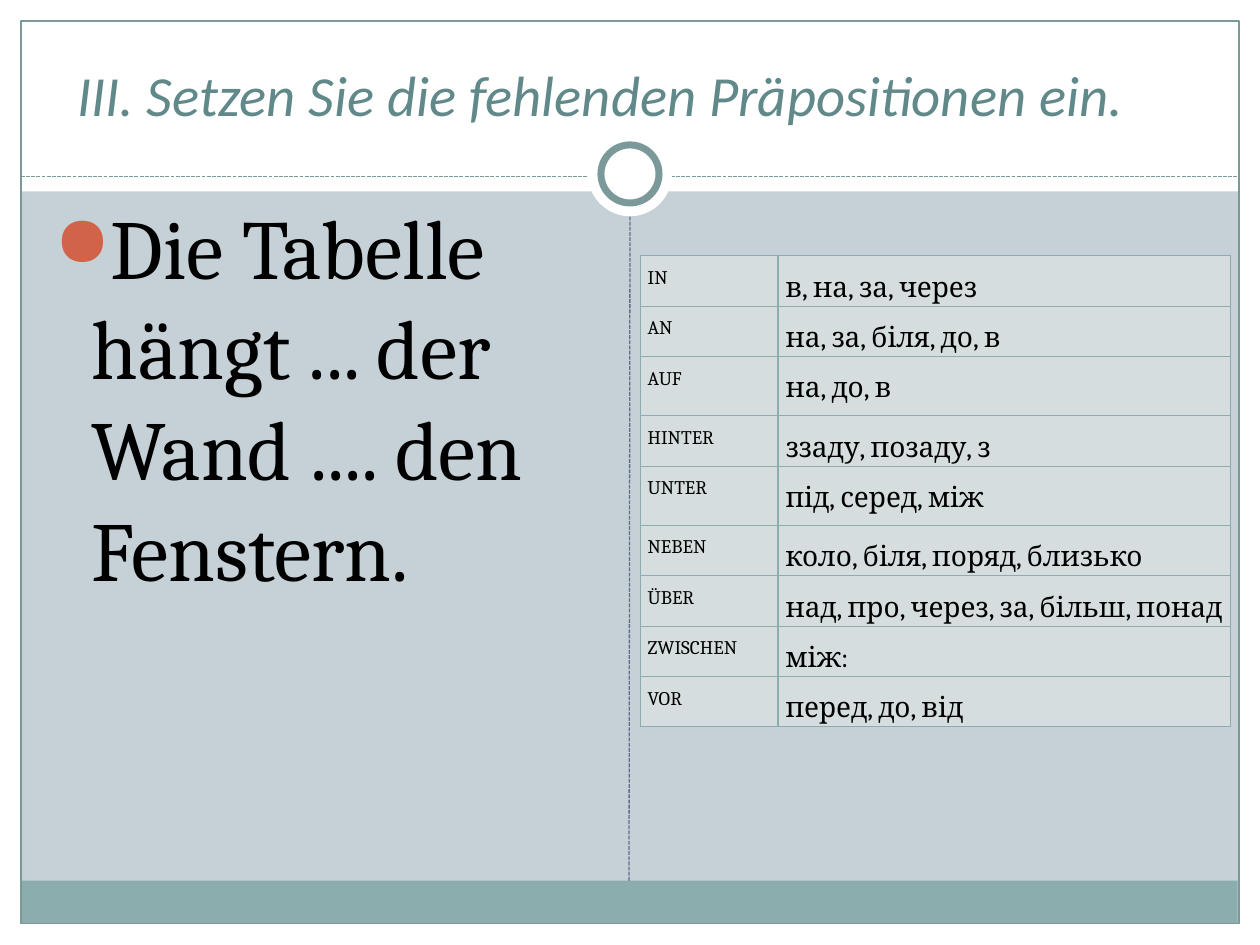
from dataclasses import dataclass

from lxml.etree import SubElement
from pptx import Presentation
from pptx.dml.color import RGBColor
from pptx.enum.dml import MSO_LINE
from pptx.enum.shapes import MSO_CONNECTOR, MSO_SHAPE
from pptx.enum.text import MSO_ANCHOR, PP_ALIGN
from pptx.oxml.ns import qn
from pptx.util import Pt

WHITE = RGBColor(0xFF, 0xFF, 0xFF)
BLACK = RGBColor(0x00, 0x00, 0x00)
MIST = RGBColor(0xC5, 0xD1, 0xD7)
PALE = RGBColor(0xD5, 0xDD, 0xDE)
SAGE = RGBColor(0x8C, 0xAD, 0xAE)
TEAL = RGBColor(0x7C, 0x99, 0x9A)
DEEP = RGBColor(0x61, 0x89, 0x8A)
SLATE = RGBColor(0x64, 0x6B, 0x86)
RUST = RGBColor(0xD1, 0x63, 0x49)


@dataclass
class Panel:
    """A preset shape with its place in points and its colours."""

    left: float
    top: float
    width: float
    height: float
    fill: RGBColor | None = WHITE
    edge: RGBColor | None = None
    weight: float = 0.75
    kind: MSO_SHAPE = MSO_SHAPE.RECTANGLE


@dataclass
class Entry:
    """A preposition with its meanings and row height."""

    word: str
    sense: str
    height: float = 28.1


MARGINS = [
    Panel(0, 527.8, 720, 12.2),
    Panel(0, 0, 720, 109.4),
    Panel(0, 0, 12, 540),
    Panel(708, 0, 12, 540),
]
FOOTER = Panel(11.7, 503.3, 695.5, 24.5, SAGE)
FRAME = Panel(12, 12, 696, 515.8, None, TEAL)
RINGS = [
    Panel(336, 75.6, 48, 48, kind=MSO_SHAPE.OVAL),
    Panel(343.4, 82.8, 33.2, 33.2, WHITE, TEAL, 4, MSO_SHAPE.OVAL),
]
ENTRIES = [
    Entry("IN", "в, на, за, через"),
    Entry("AN", "на, за, біля, до, в"),
    Entry("AUF", "на, до, в", 33.8),
    Entry("HINTER", "ззаду, позаду, з"),
    Entry("UNTER", "під, серед, між", 33.8),
    Entry("NEBEN", "коло, біля, поряд, близько"),
    Entry("ÜBER", "над, про, через, за, більш, понад"),
    Entry("ZWISCHEN", "між:", 26),
    Entry("VOR", "перед, до, від", 22.3),
]


def add_panel(slide, panel: Panel):
    """Draw a panel and return its shape."""
    shape = slide.shapes.add_shape(
        panel.kind, Pt(panel.left), Pt(panel.top), Pt(panel.width), Pt(panel.height)
    )
    shape.shadow.inherit = False
    if panel.fill is None:
        shape.fill.background()
    else:
        shape.fill.solid()
        shape.fill.fore_color.rgb = panel.fill
    if panel.edge is None:
        shape.line.fill.background()
    else:
        shape.line.color.rgb = panel.edge
        shape.line.width = Pt(panel.weight)
    return shape


def add_rule(slide, start: tuple, end: tuple, color: RGBColor):
    """Draw a thin dashed line and return it."""
    rule = slide.shapes.add_connector(
        MSO_CONNECTOR.STRAIGHT, *[Pt(value) for value in (*start, *end)]
    )
    rule.line.color.rgb = color
    rule.line.width = Pt(0.75)
    rule.line.dash_style = MSO_LINE.SQUARE_DOT
    SubElement(rule._element.spPr, qn("a:effectLst"))
    return rule


def style_text(part, size: float, font: str, color: RGBColor) -> None:
    """Format the first run of a paragraph."""
    face = part.runs[0].font
    face.size, face.name = Pt(size), font
    face.color.rgb = color


def add_text(slide, text: str, left: float, top: float, width: float, height: float):
    """Add a wrapped text box and return its frame."""
    frame = slide.shapes.add_textbox(Pt(left), Pt(top), Pt(width), Pt(height)).text_frame
    frame.word_wrap = True
    frame.text = text
    return frame


def add_bullet(part) -> None:
    """Give a paragraph a round coloured bullet and hanging indent."""
    props = part._p.get_or_add_pPr()
    props.set("marL", str(Pt(21.6)))
    props.set("indent", str(Pt(-21.6)))
    tint = SubElement(props, qn("a:buClr"))
    SubElement(tint, qn("a:srgbClr"), val=str(RUST))
    SubElement(props, qn("a:buSzPct"), val="85000")
    SubElement(props, qn("a:buChar"), char="●")


def fill_cell(cell, text: str, size: float) -> None:
    """Write a table cell with its fill and borders."""
    cell.margin_left = cell.margin_right = Pt(4.3)
    cell.margin_top = cell.margin_bottom = 0
    cell.text_frame.text = text
    part = cell.text_frame.paragraphs[0]
    part.alignment = PP_ALIGN.JUSTIFY
    part.line_spacing = 1.5
    style_text(part, size, "Cambria", BLACK)
    props = cell._tc.get_or_add_tcPr()
    for side in ("lnL", "lnR", "lnT", "lnB"):
        line = SubElement(props, qn(f"a:{side}"), w=str(Pt(0.75)))
        paint = SubElement(line, qn("a:solidFill"))
        SubElement(paint, qn("a:srgbClr"), val=str(SAGE))
    cell.fill.solid()
    cell.fill.fore_color.rgb = PALE


def add_grid(slide, entries: list[Entry]) -> None:
    """Build the table of prepositions."""
    total = sum(entry.height for entry in entries)
    table = slide.shapes.add_table(
        len(entries), 2, Pt(365.8), Pt(146.2), Pt(337.4), Pt(total)
    ).table
    table.first_row = table.horz_banding = False
    for column, width in zip(table.columns, (78.8, 258.6)):
        column.width = Pt(width)
    for index, entry in enumerate(entries):
        table.rows[index].height = Pt(entry.height)
        fill_cell(table.cell(index, 0), entry.word, 11)
        fill_cell(table.cell(index, 1), entry.sense, 16)


def main() -> None:
    """Build the slide and save it."""
    deck = Presentation()
    deck.slide_width, deck.slide_height = Pt(720), Pt(540)
    slide = deck.slides.add_slide(deck.slide_layouts[6])
    slide.background.fill.solid()
    slide.background.fill.fore_color.rgb = MIST

    for panel in MARGINS:
        add_panel(slide, panel)
    footer = add_panel(slide, FOOTER)
    add_panel(slide, FRAME)
    add_rule(slide, (12, 100.8), (708, 100.8), TEAL)
    for ring in RINGS:
        add_panel(slide, ring)
    split = add_rule(slide, (359.4, 503.3), (360, 123.6), SLATE)
    split.begin_connect(footer, 0)

    title = add_text(
        slide, "ІІІ. Setzen Sie die fehlenden Präpositionen ein.", 37, 16.6, 670, 59.8
    )
    title.vertical_anchor = MSO_ANCHOR.BOTTOM
    style_text(title.paragraphs[0], 32.4, "Calibri", DEEP)
    title.paragraphs[0].runs[0].font.italic = True

    task = add_text(
        slide, "Die Tabelle hängt ... der Wand .... den Fenstern.", 23.8, 108, 318.2, 368.6
    ).paragraphs[0]
    style_text(task, 48, "Cambria", BLACK)
    task.space_before = Pt(2)
    add_bullet(task)
    add_grid(slide, ENTRIES)
    deck.save("out.pptx")


if __name__ == "__main__":
    main()
